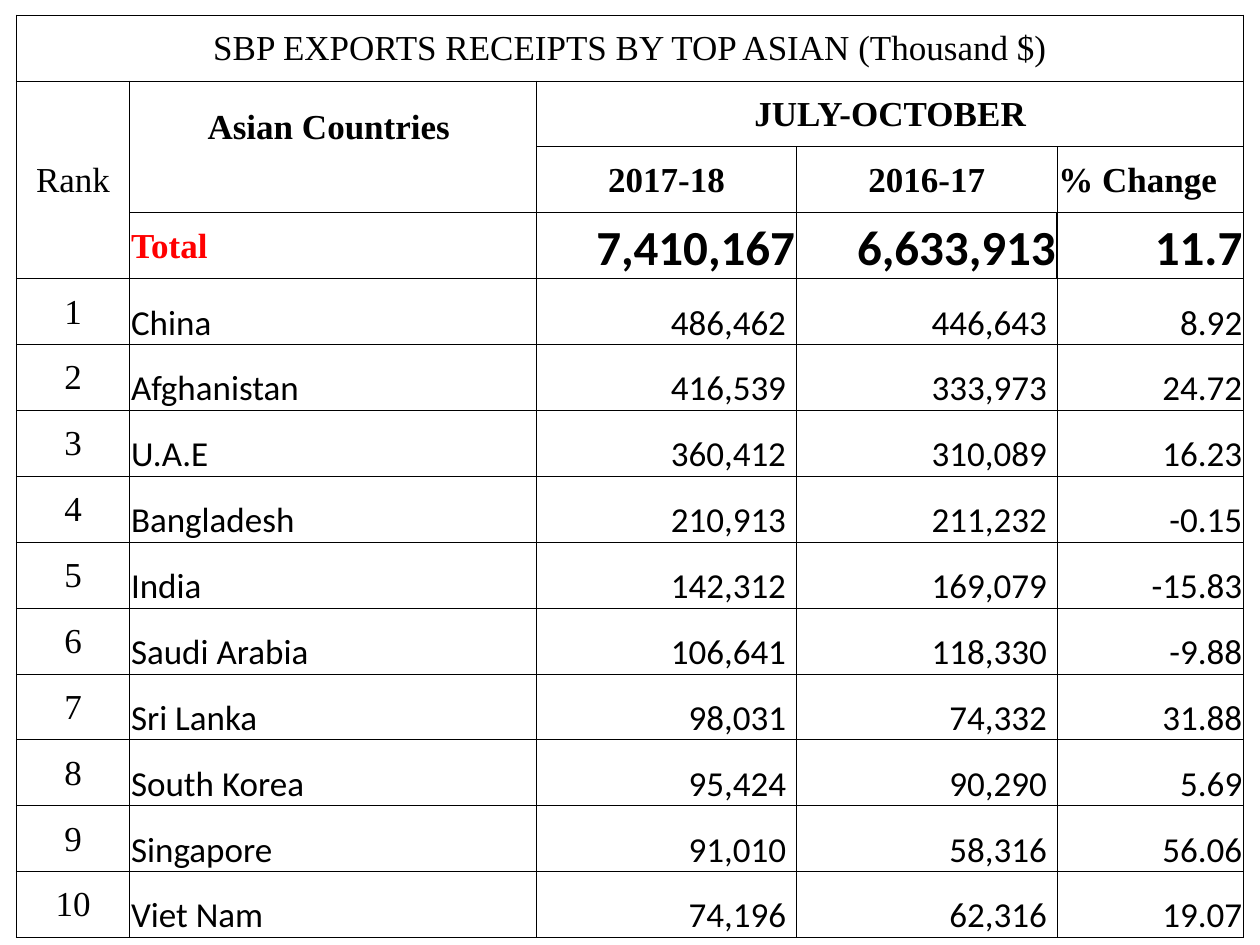
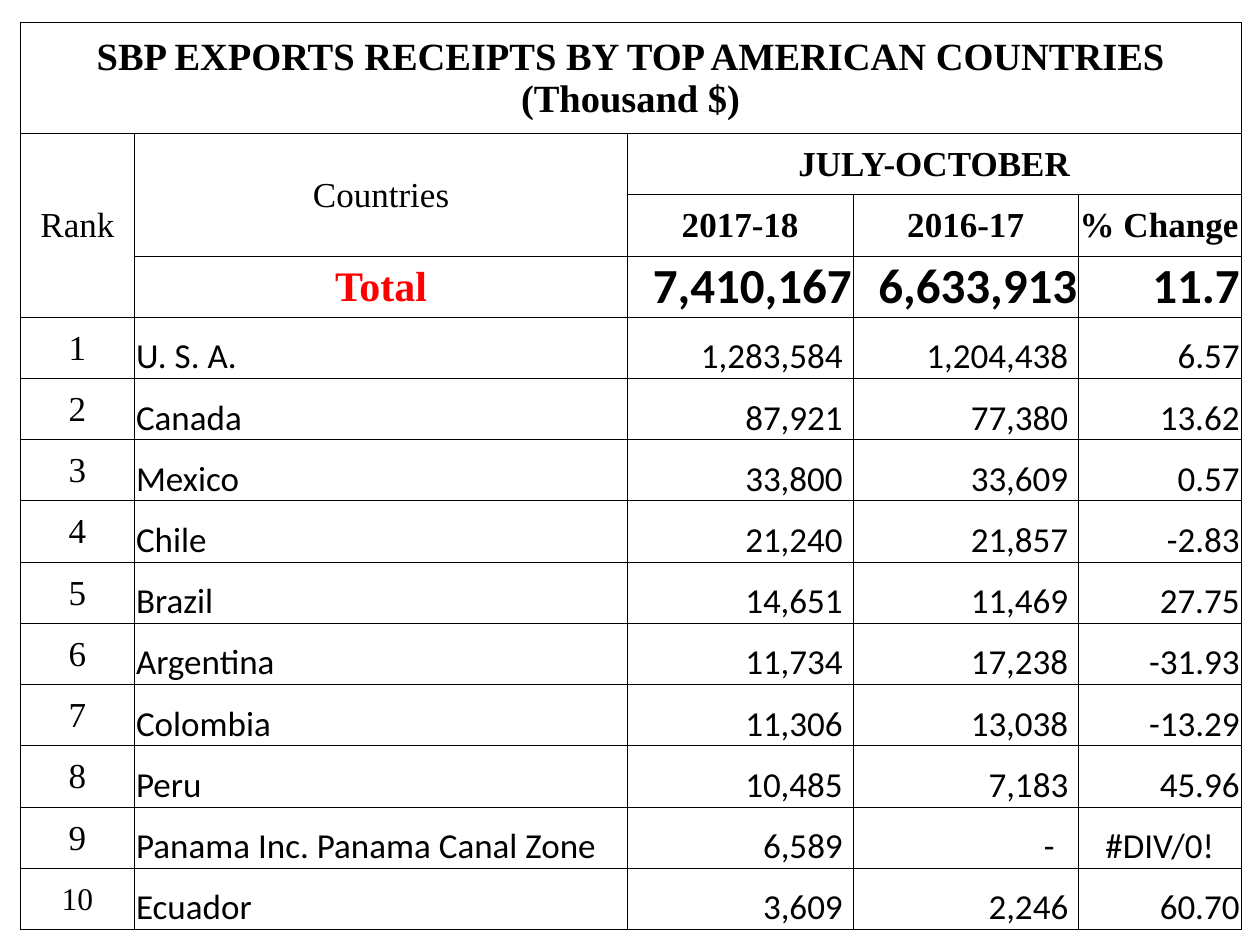
from lxml import etree
from pptx import Presentation
from pptx.dml.color import RGBColor
from pptx.enum.text import MSO_ANCHOR, PP_ALIGN
from pptx.oxml.ns import qn
from pptx.util import Inches, Pt

LEFT, CENTER, RIGHT = PP_ALIGN.LEFT, PP_ALIGN.CENTER, PP_ALIGN.RIGHT
MIDDLE, BOTTOM = MSO_ANCHOR.MIDDLE, MSO_ANCHOR.BOTTOM
COLORS = {"text": "000000", "total": "FF0000", "border": "000000"}
SERIF, SANS = "Times New Roman", "Calibri"
VALUE_INSET = 0.08
HEADER_ROWS = 4
TOTALS = ("7,410,167", "6,633,913", "11.7")

ASIAN = [
    ("China", "486,462", "446,643", "8.92"),
    ("Afghanistan", "416,539", "333,973", "24.72"),
    ("U.A.E", "360,412", "310,089", "16.23"),
    ("Bangladesh", "210,913", "211,232", "-0.15"),
    ("India", "142,312", "169,079", "-15.83"),
    ("Saudi Arabia", "106,641", "118,330", "-9.88"),
    ("Sri Lanka", "98,031", "74,332", "31.88"),
    ("South Korea", "95,424", "90,290", "5.69"),
    ("Singapore", "91,010", "58,316", "56.06"),
    ("Viet Nam", "74,196", "62,316", "19.07"),
]
AMERICAN = [
    ("U. S. A.", "1,283,584", "1,204,438", "6.57"),
    ("Canada", "87,921", "77,380", "13.62"),
    ("Mexico", "33,800", "33,609", "0.57"),
    ("Chile", "21,240", "21,857", "-2.83"),
    ("Brazil", "14,651", "11,469", "27.75"),
    ("Argentina", "11,734", "17,238", "-31.93"),
    ("Colombia", "11,306", "13,038", "-13.29"),
    ("Peru", "10,485", "7,183", "45.96"),
    ("Panama Inc. Panama Canal Zone", "6,589", "-", "#DIV/0!"),
    ("Ecuador", "3,609", "2,246", "60.70"),
]


class Deck:
    """Hold the presentation, its table style and the current slide."""

    def __init__(self):
        """Start an empty 10 by 7.5 inch presentation."""
        self.prs = Presentation()
        self.prs.slide_width, self.prs.slide_height = Inches(10), Inches(7.5)

    def slide(self):
        """Add a blank slide and make it current."""
        self.s = self.prs.slides.add_slide(self.prs.slide_layouts[6])

    def border(self, cell, side, width=0.5):
        """Draw one border of a cell, replacing an earlier one."""
        tc_pr = cell._tc.get_or_add_tcPr()
        tag = qn(f"a:ln{side}")
        old = tc_pr.find(tag)
        index = "LRTB".index(side)
        if old is not None:
            tc_pr.remove(old)
        ln = etree.Element(tag, w=str(Pt(width)))
        fill = etree.SubElement(ln, qn("a:solidFill"))
        etree.SubElement(fill, qn("a:srgbClr"), val=COLORS["border"])
        tc_pr.insert(index, ln)

    def table(self, left, top, widths, heights):
        """Add an unfilled table with thin borders."""
        frame = self.s.shapes.add_table(
            len(heights), len(widths), Inches(left), Inches(top),
            Inches(sum(widths)), Inches(sum(heights)))
        tbl = frame.table
        tbl.first_row = tbl.horz_banding = False
        for column, width in zip(tbl.columns, widths):
            column.width = Inches(width)
        for row, height in zip(tbl.rows, heights):
            row.height = Inches(height)
        for cell in tbl.iter_cells():
            cell.fill.background()
            for side in "LRTB":
                self.border(cell, side)
        self.tbl = tbl

    def cell(self, row, col, text, span=(1, 1), align=CENTER, anchor=MIDDLE,
             right=0.01, bottom=0, color="text", **font):
        """Write one cell, merged over span rows and columns."""
        cell = self.tbl.cell(row, col)
        if span != (1, 1):
            cell.merge(self.tbl.cell(row + span[0] - 1, col + span[1] - 1))
        layout = {"vertical_anchor": anchor, "margin_left": Inches(0.01),
                  "margin_right": Inches(right), "margin_top": Inches(0.01),
                  "margin_bottom": Inches(bottom)}
        for name, value in layout.items():
            setattr(cell, name, value)
        p = cell.text_frame.paragraphs[0]
        p.alignment = align
        r = p.add_run()
        r.text = text
        style = {"name": SERIF, "size": 20, "bold": False} | font
        style["size"] = Pt(style["size"])
        for name, value in style.items():
            setattr(r.font, name, value)
        r.font.color.rgb = RGBColor.from_string(COLORS[color])

    def header(self, title, title_font, countries, countries_format, total_format):
        """Write the title, the column headings and the total row."""
        self.cell(0, 0, title, (1, 5), **title_font)
        self.cell(1, 0, "Rank", (3, 1))
        self.cell(1, 1, countries, (2, 1), **countries_format)
        self.cell(1, 2, "JULY-OCTOBER", (1, 3), bold=True)
        self.cell(2, 2, "2017-18", bold=True)
        self.cell(2, 3, "2016-17", bold=True)
        self.cell(2, 4, "% Change", align=LEFT, bold=True)
        self.cell(3, 1, "Total", color="total", bold=True, **total_format)
        for col, total in enumerate(TOTALS, 2):
            self.cell(3, col, total, align=RIGHT, anchor=BOTTOM,
                      name=SANS, size=28, bold=True)

    def ranking(self, countries, last_rank_size=20):
        """Write one row for each ranked country."""
        for rank, (country, *values, change) in enumerate(countries, 1):
            row = HEADER_ROWS + rank - 1
            size = last_rank_size if rank == len(countries) else 20
            self.cell(row, 0, str(rank), size=size)
            self.cell(row, 1, country, align=LEFT, anchor=BOTTOM, name=SANS)
            for col, value in enumerate(values, 2):
                inset = 0.19 if value == "-" else VALUE_INSET
                self.cell(row, col, value, align=RIGHT, anchor=BOTTOM,
                          right=inset, name=SANS)
            align = CENTER if change.startswith("#") else RIGHT
            self.cell(row, 4, change, align=align, anchor=BOTTOM, name=SANS)


def asian_slide(deck):
    """Build the table of Asian countries."""
    deck.slide()
    deck.table(0.13, 0.12, [0.9, 3.23, 2.06, 2.07, 1.48], [7.32 / 14] * 14)
    deck.header("SBP EXPORTS RECEIPTS BY TOP ASIAN (Thousand $)", {},
                "Asian Countries", {"bold": True, "right": 0.08, "bottom": 0.32},
                {"align": LEFT})
    for col, side in ((2, "R"), (3, "L"), (3, "R"), (4, "L")):
        deck.border(deck.tbl.cell(3, col), side, 1)
    deck.ranking(ASIAN)


def american_slide(deck):
    """Build the table of American countries."""
    deck.slide()
    title_height = 0.88
    deck.table(0.16, 0.18, [0.91, 3.91, 1.79, 1.79, 1.29],
               [title_height] + [(7.2 - title_height) / 13] * 13)
    deck.header("SBP EXPORTS RECEIPTS BY TOP AMERICAN COUNTRIES (Thousand $)",
                {"size": 22, "bold": True}, "Countries", {}, {"size": 24})
    deck.ranking(AMERICAN, last_rank_size=18)


def main():
    """Build both slides and save them."""
    deck = Deck()
    asian_slide(deck)
    american_slide(deck)
    deck.prs.save("out.pptx")


if __name__ == "__main__":
    main()
